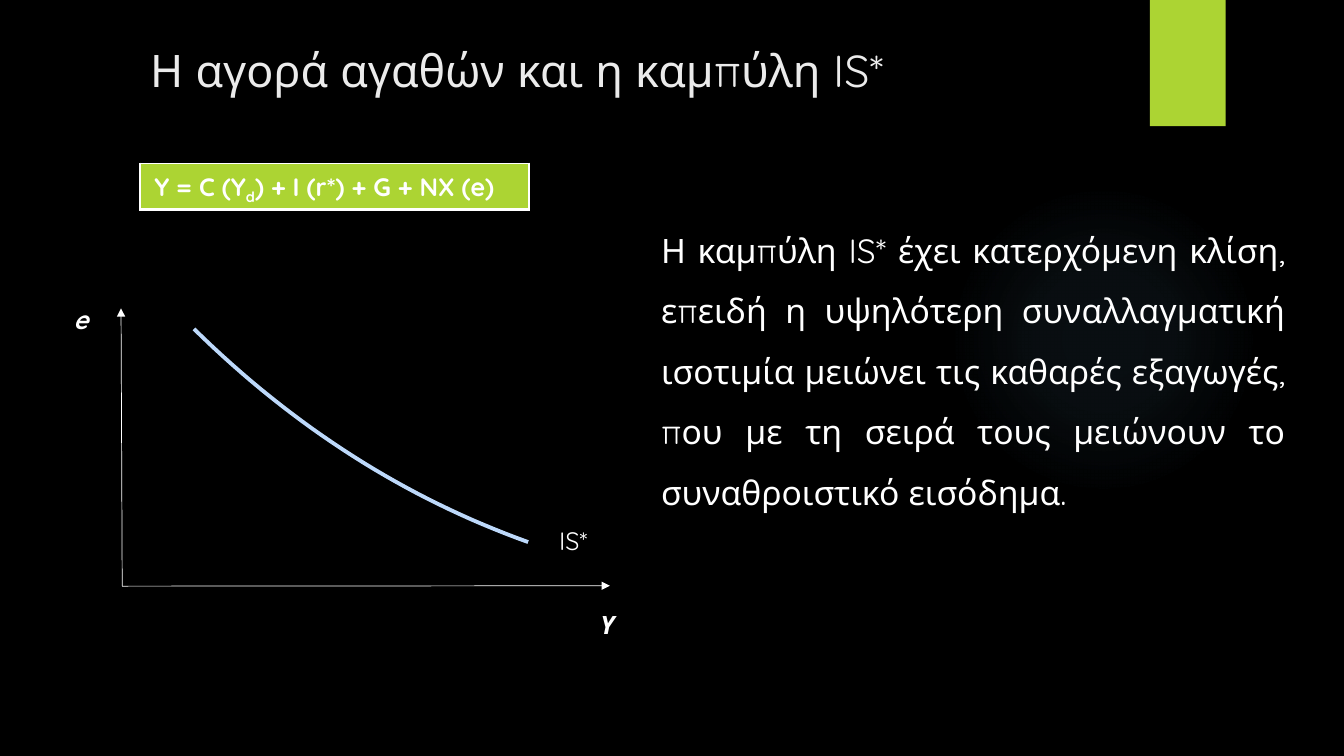
from pptx import Presentation
from pptx.dml.color import RGBColor
from pptx.enum.shapes import MSO_CONNECTOR, MSO_SHAPE
from pptx.enum.text import MSO_ANCHOR, PP_ALIGN
from pptx.oxml import parse_xml
from pptx.oxml.ns import nsdecls, qn
from pptx.util import Cm, Pt

COLORS = {"background": "000000", "accent": "ACD433", "title": "EBEBEB",
          "text": "FFFFFF", "curve": "BDD9FB", "glow": "7AC4F0"}
FONT = "Quicksand"


def rgb(name):
    return RGBColor.from_string(COLORS[name])


def element(tag, body="", attrs=""):
    return parse_xml(f"<a:{tag} {nsdecls('a')} {attrs}>{body}</a:{tag}>")


def color_xml(name, inner=""):
    return f'<a:srgbClr val="{COLORS[name]}">{inner}</a:srgbClr>'


class SlideBuilder:
    def __init__(self, prs):
        self.slide = prs.slides.add_slide(prs.slide_layouts[5])
        self.shapes = self.slide.shapes
        fill = self.slide.background.fill
        fill.solid()
        fill.fore_color.rgb = rgb("background")

    def add_runs(self, p, runs, color="text", align=PP_ALIGN.LEFT, spacing=1.0, **fmt):
        """Fill a paragraph with runs of (text, baseline percent)."""
        p.alignment = align
        p.line_spacing = spacing
        for text, baseline in runs:
            r = p.add_run()
            r.text = text
            for name, value in {"name": FONT, **fmt}.items():
                setattr(r.font, name, value)
            r.font.color.rgb = rgb(color)
            if baseline:
                r.font._element.set("baseline", str(baseline * 1000))

    def title(self, text, *box):
        sp = self.shapes.title
        for name, value in zip(("left", "top", "width", "height"), box):
            setattr(sp, name, Cm(value))
        tf = sp.text_frame
        tf.word_wrap = True
        tf.vertical_anchor = MSO_ANCHOR.TOP
        self.add_runs(tf.paragraphs[0], [(text, 0)], "title", size=Pt(32))

    def text(self, text, *box, **fmt):
        tf = self.shapes.add_textbox(*map(Cm, box)).text_frame
        tf.word_wrap = True
        self.add_runs(tf.paragraphs[0], [(text, 0)], **fmt)

    def shape(self, kind, color, *box):
        sp = self.shapes.add_shape(kind, *map(Cm, box))
        sp.shadow.inherit = False
        sp.fill.solid()
        sp.fill.fore_color.rgb = rgb(color)
        sp.line.fill.background()
        return sp

    def glow(self, *box):
        """Draw a circle that fades out from its centre."""
        sp = self.shape(MSO_SHAPE.OVAL, "glow", *box)
        stops = "".join(
            f'<a:gs pos="{pos * 1000}">'
            + color_xml("glow", f'<a:alpha val="{alpha * 1000}"/>') + "</a:gs>"
            for pos, alpha in ((0, 7), (36, 6), (69, 0), (100, 0)))
        centre = '<a:fillToRect l="50000" t="50000" r="50000" b="50000"/>'
        grad = element("gradFill", f'<a:gsLst>{stops}</a:gsLst>'
                       f'<a:path path="circle">{centre}</a:path>')
        spPr = sp.element.spPr
        spPr.replace(spPr.find(qn("a:solidFill")), grad)

    def formula(self, runs, *box):
        """Put the equation in a bordered table of one cell."""
        table = self.shapes.add_table(1, 1, *map(Cm, box)).table
        cell = table.cell(0, 0)
        margins = {"margin_left": 0.36, "margin_right": 0.18,
                   "margin_top": 0, "margin_bottom": 0}
        for name, value in margins.items():
            setattr(cell, name, Cm(value))
        cell.vertical_anchor = MSO_ANCHOR.MIDDLE
        self.add_runs(cell.text_frame.paragraphs[0], runs, spacing=1.15,
                      size=Pt(18), bold=True)
        tcPr = cell._tc.get_or_add_tcPr()
        for side, width in (("L", 1), ("R", 1), ("T", 1), ("B", 3)):
            line = f"<a:solidFill>{color_xml('text')}</a:solidFill>"
            tcPr.append(element(f"ln{side}", line, f'w="{Pt(width)}"'))
        cell.fill.solid()
        cell.fill.fore_color.rgb = rgb("accent")

    def arrow(self, start, end):
        cn = self.shapes.add_connector(MSO_CONNECTOR.STRAIGHT,
                                       *map(Cm, (*start, *end)))
        cn.line.color.rgb = rgb("text")
        cn.line.width = Pt(0.5)
        spPr = cn.element.spPr
        spPr.find(qn("a:ln")).append(element("tailEnd", attrs='type="triangle"'))
        spPr.append(element("effectLst"))

    def curve(self, start, control, end, steps=32):
        """Draw a quadratic Bézier curve through short segments."""
        points = []
        for i in range(steps + 1):
            t = i / steps
            points.append(tuple(
                Cm((1 - t) ** 2 * a + 2 * t * (1 - t) * b + t ** 2 * c)
                for a, b, c in zip(start, control, end)))
        builder = self.shapes.build_freeform(*points[0])
        builder.add_line_segments(points[1:], close=False)
        sp = builder.convert_to_shape()
        sp.shadow.inherit = False
        sp.fill.background()
        sp.line.color.rgb = rgb("curve")
        sp.line.width = Pt(2.75)


def main():
    prs = Presentation()
    prs.slide_width, prs.slide_height = Cm(33.87), Cm(19.05)
    s = SlideBuilder(prs)

    s.glow(23.9, 4.65, 7.82, 7.82)
    s.shape(MSO_SHAPE.RECTANGLE, "accent", 28.98, 0, 1.91, 3.18)
    s.title("Η αγορά αγαθών και η καμπύλη IS*", 3.53, 0.94, 26.24, 2.16)
    s.formula([("Y = C (Y", 0), ("d", -25), (") + I (r*) + G + NX (e)", 0)],
              3.53, 4.11, 9.8, 1.17)

    origin = (3.08, 14.77)
    s.arrow(origin, (15.37, 14.76))
    s.arrow(origin, (3.05, 7.77))
    s.curve((4.89, 8.29), (8.67, 12), (13.31, 13.66))
    for label, left, top, strong in (("Υ", 14.88, 15.24, True),
                                     ("e", 1.6, 7.54, True),
                                     ("IS*", 13.84, 13.11, False)):
        s.text(label, left, top, 1.55, 1.22, size=Pt(18), bold=strong, italic=strong)

    s.text("Η καμπύλη IS* έχει κατερχόμενη κλίση, επειδή η υψηλότερη "
           "συναλλαγματική ισοτιμία μειώνει τις καθαρές εξαγωγές, που με τη "
           "σειρά τους μειώνουν το συναθροιστικό εισόδημα.",
           16.41, 5.16, 16.23, 7.95,
           size=Pt(24), align=PP_ALIGN.JUSTIFY, spacing=1.5)
    prs.save("out.pptx")


if __name__ == "__main__":
    main()
